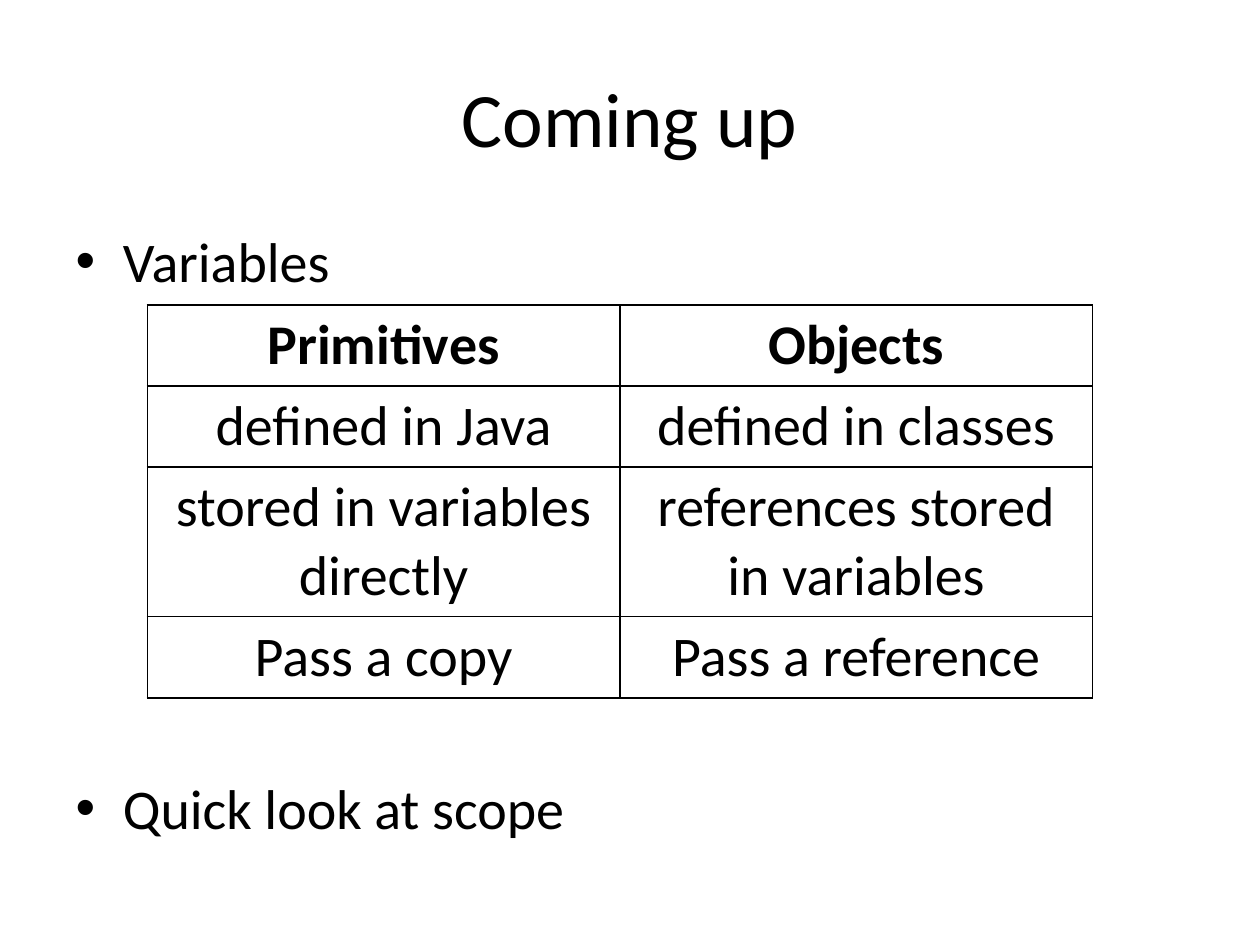
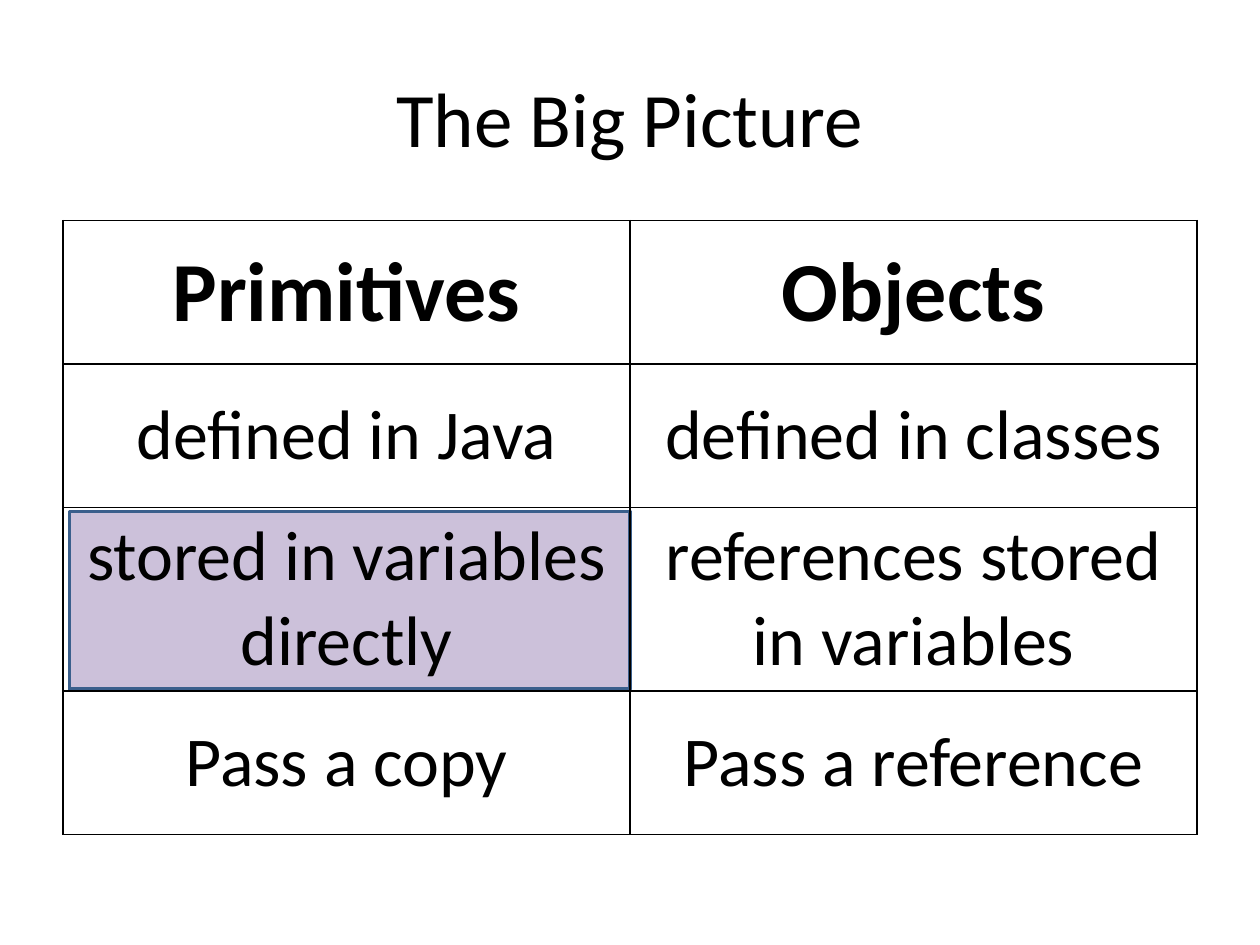
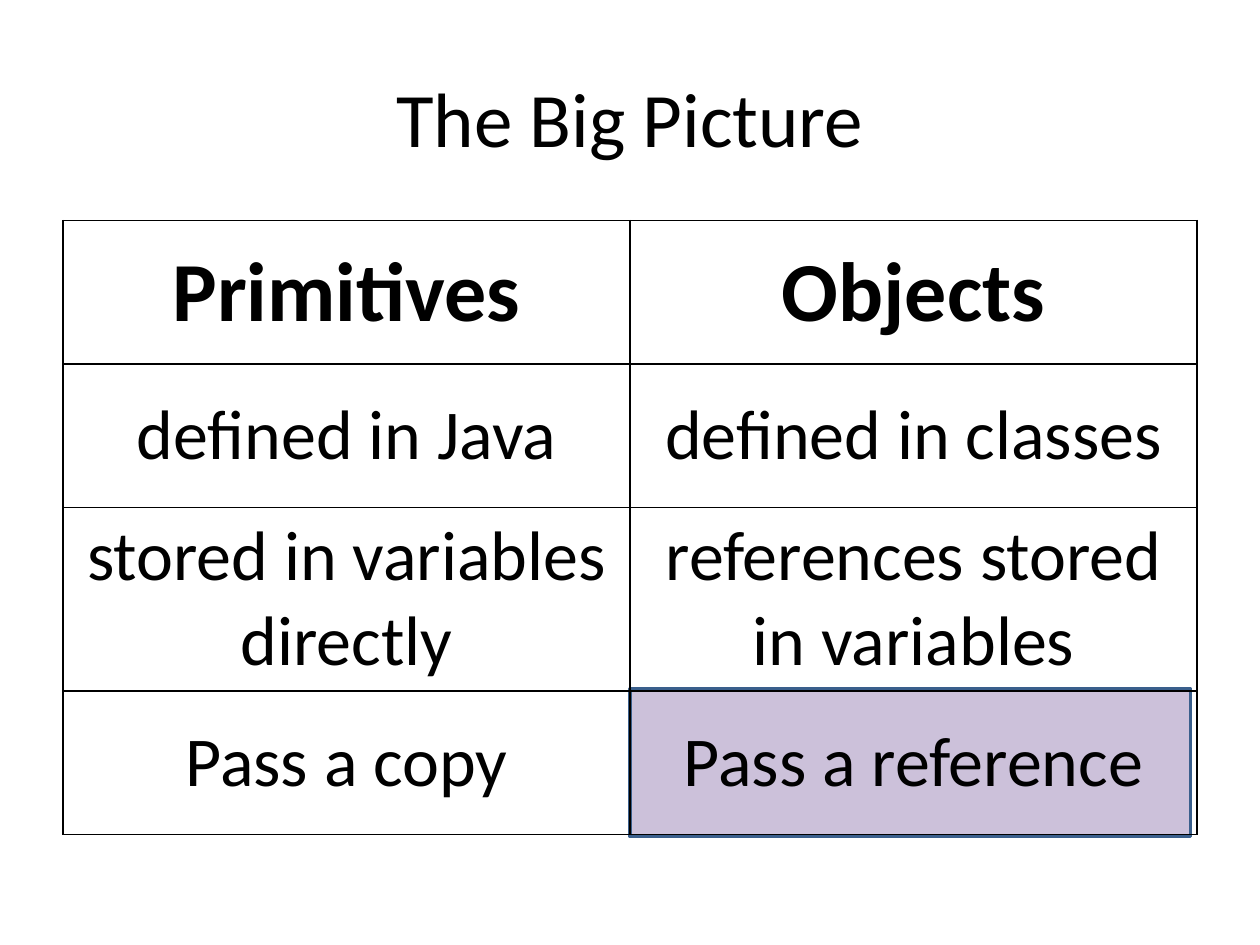
"""Build three slides that compare primitives and objects in Java."""

from lxml import etree
from pptx import Presentation
from pptx.dml.color import RGBColor
from pptx.enum.shapes import MSO_SHAPE
from pptx.enum.text import MSO_ANCHOR, MSO_AUTO_SIZE, PP_ALIGN
from pptx.oxml.ns import qn
from pptx.util import Inches, Pt

RECTANGLE = MSO_SHAPE.RECTANGLE
MIDDLE = MSO_ANCHOR.MIDDLE
NO_AUTOFIT = MSO_AUTO_SIZE.NONE
CENTER = PP_ALIGN.CENTER

COLORS = {"text": "000000", "border": "000000", "highlight": "CCC1DA", "outline": "3A5F8C"}
FONT = "Calibri"
PLAIN_TABLE_STYLE = "{2D5ABB26-0587-4C30-8999-92F81FD0307C}"
TITLE_AND_CONTENT, TITLE_ONLY = 1, 5

COMPARISON = [
    ("Primitives", "Objects"),
    ("defined in Java", "defined in classes"),
    ("stored in variables directly", "references stored in variables"),
    ("Pass a copy", "Pass a reference"),
]
SMALL_TABLE = {"left": 1.17, "top": 2.42, "column": 3.75,
               "rows": [0.64, 0.64, 1.18, 0.64], "sizes": [32, 32, 32, 32]}
LARGE_TABLE = {"left": 0.5, "top": 1.75, "column": 4.5,
               "rows": [1.14, 1.14, 1.45, 1.14], "sizes": [48, 40, 40, 40]}
SLIDES = [
    {"title": "Coming up", "topics": ["Variables", "Quick look at scope"],
     "table": SMALL_TABLE, "highlight": None},
    {"title": "The Big Picture", "topics": [],
     "table": LARGE_TABLE, "highlight": (0.55, 4.06, 4.45, 1.41)},
    {"title": "The Big Picture", "topics": [],
     "table": LARGE_TABLE, "highlight": (5, 5.47, 4.45, 1.17)},
]
TOPIC_GAP = 274


def format_runs(paragraph, size, bold=False):
    for run in paragraph.runs:
        run.font.name = FONT
        run.font.size = Pt(size)
        run.font.bold = bold
        run.font.color.rgb = RGBColor.from_string(COLORS["text"])


def add_borders(cell):
    properties = cell._tc.get_or_add_tcPr()
    for side in ("a:lnL", "a:lnR", "a:lnT", "a:lnB"):
        line = etree.SubElement(properties, qn(side), w=str(Pt(1)))
        fill = etree.SubElement(line, qn("a:solidFill"))
        etree.SubElement(fill, qn("a:srgbClr"), val=COLORS["border"])


presentation = Presentation()
presentation.slide_width = Inches(10)
presentation.slide_height = Inches(7.5)

for content in SLIDES:
    layout = TITLE_AND_CONTENT if content["topics"] else TITLE_ONLY
    slide = presentation.slides.add_slide(presentation.slide_layouts[layout])

    title = slide.shapes.title
    title.left, title.top, title.width, title.height = map(Inches, (0.5, 0.3, 9, 1.25))
    title.text_frame.text = content["title"]
    title.text_frame.vertical_anchor = MIDDLE
    title.text_frame.auto_size = NO_AUTOFIT
    title.text_frame.paragraphs[0].alignment = CENTER
    format_runs(title.text_frame.paragraphs[0], 44)

    if content["topics"]:
        body = slide.placeholders[1]
        body.left, body.top, body.width, body.height = map(Inches, (0.5, 1.75, 5.05, 4.95))
        body.text_frame.text = "\n".join(content["topics"])
        body.text_frame.auto_size = NO_AUTOFIT
        for paragraph in body.text_frame.paragraphs:
            format_runs(paragraph, 32)
        body.text_frame.paragraphs[-1].space_before = Pt(TOPIC_GAP)

    if content["highlight"]:
        highlight = slide.shapes.add_shape(RECTANGLE, *map(Inches, content["highlight"]))
        highlight.shadow.inherit = False
        highlight.fill.solid()
        highlight.fill.fore_color.rgb = RGBColor.from_string(COLORS["highlight"])
        highlight.line.color.rgb = RGBColor.from_string(COLORS["outline"])
        highlight.line.width = Pt(2)

    design = content["table"]
    table = slide.shapes.add_table(
        len(COMPARISON), 2, Inches(design["left"]), Inches(design["top"]),
        Inches(2 * design["column"]), Inches(sum(design["rows"]))).table
    table.first_row = False
    table.horz_banding = False
    table._tbl.tblPr.find(qn("a:tableStyleId")).text = PLAIN_TABLE_STYLE
    for column in table.columns:
        column.width = Inches(design["column"])
    for row_index, texts in enumerate(COMPARISON):
        table.rows[row_index].height = Inches(design["rows"][row_index])
        for column_index, text in enumerate(texts):
            cell = table.cell(row_index, column_index)
            cell.text_frame.text = text
            cell.vertical_anchor = MIDDLE
            add_borders(cell)
            cell.fill.background()
            paragraph = cell.text_frame.paragraphs[0]
            paragraph.alignment = CENTER
            format_runs(paragraph, design["sizes"][row_index], bold=row_index == 0)

presentation.save("out.pptx")
